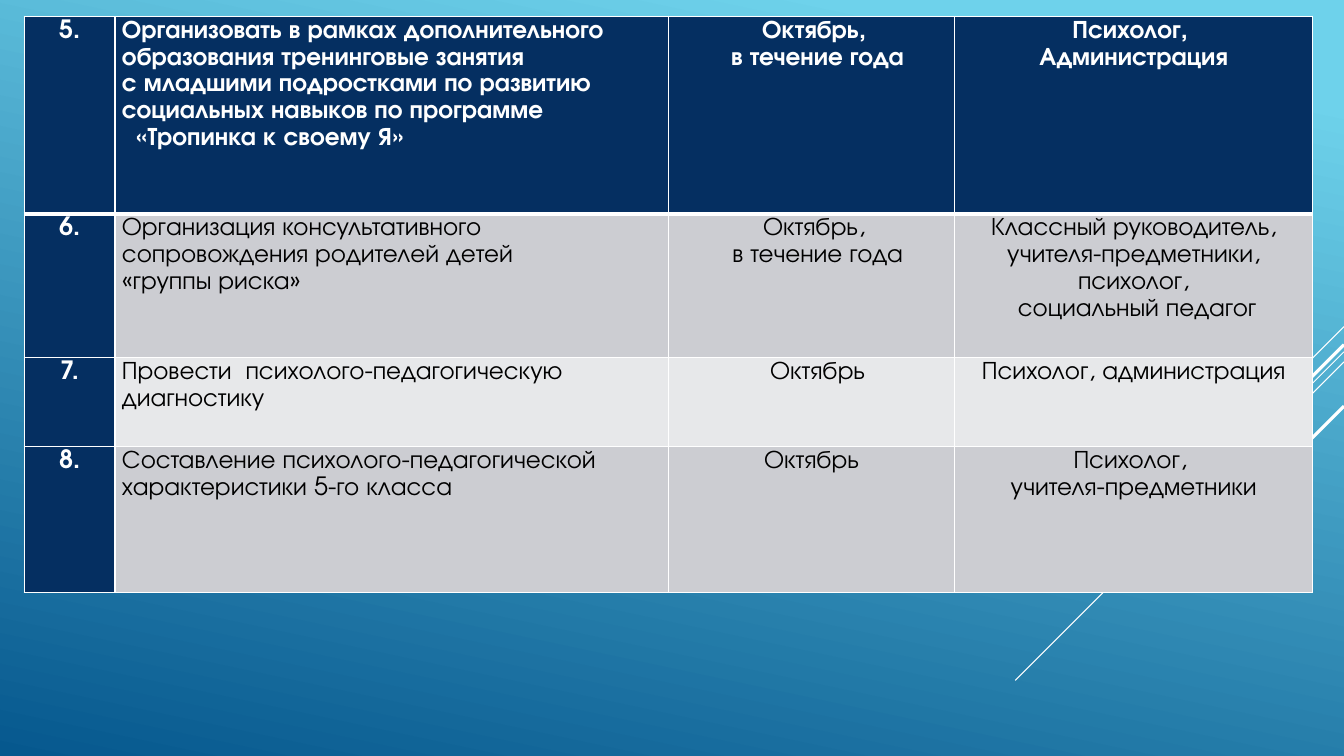
from lxml import etree
from pptx import Presentation
from pptx.dml.color import RGBColor
from pptx.enum.shapes import MSO_CONNECTOR
from pptx.enum.text import PP_ALIGN
from pptx.oxml.ns import qn
from pptx.util import Inches, Pt

COLORS = {"white": "FFFFFF", "black": "000000", "navy": "052F61",
          "gray": "CCCDD2", "light": "E7E8EA", "sky": "6ED2EB", "deep": "06588E"}
FONT = "TeX Gyre Adventor"
COL_WIDTHS = [0.9, 5.49, 2.84, 3.55]
ROW_HEIGHTS = [1.96, 1.43, 0.88, 1.45]
ROW_FILLS = ["navy", "gray", "light", "gray"]
# Each line of a cell's text is a paragraph of its own.
PLAN = [
    ["5.",
     "Организовать в рамках дополнительного образования тренинговые занятия\n"
     "с младшими подростками по развитию социальных навыков по программе\n"
     "  «Тропинка к своему Я»",
     "Октябрь, \nв течение года", "Психолог, \nАдминистрация"],
    ["6.",
     "Организация консультативного сопровождения родителей детей\n«группы риска»",
     "Октябрь, \nв течение года",
     "Классный руководитель, учителя-предметники, психолог,\n социальный педагог"],
    ["7.", "Провести  психолого-педагогическую диагностику",
     "Октябрь", "Психолог, администрация"],
    ["8.", "Составление психолого-педагогической характеристики 5-го класса",
     "Октябрь", "Психолог, \nучителя-предметники"],
]
# Start height at the right edge, run to the lower left, line width
RAYS = [(3.24, 1, 0.75), (3.49, 3.26, 0.75), (3.59, 2.07, 0.75),
        (3.42, 1.91, 2.25), (4.03, 1.39, 2.25)]


def rgb(name):
    return RGBColor.from_string(COLORS[name])


def set_background(s):
    fill = s.background.fill
    fill.gradient()
    fill.gradient_angle = 258
    for stop, (pos, name) in zip(fill.gradient_stops, [(0.1, "sky"), (1, "deep")]):
        stop.position = pos
        stop.color.rgb = rgb(name)


def add_ray(s, top, run, width):
    """Draw a 45-degree line from the right edge to the lower left."""
    line = s.shapes.add_connector(
        MSO_CONNECTOR.STRAIGHT, Inches(13.33), Inches(top),
        Inches(13.33 - run), Inches(top + run))
    line.line.color.rgb = rgb("white")
    line.line.width = Pt(width)
    etree.SubElement(line._element.spPr, qn("a:effectLst"))


def set_borders(cell, bottom):
    """Put white borders before the cell's fill, as the schema orders them."""
    tcPr = cell._tc.get_or_add_tcPr()
    sides = {"a:lnL": 1, "a:lnR": 1, "a:lnT": 1, "a:lnB": bottom}
    for i, (tag, width) in enumerate(sides.items()):
        ln = etree.Element(qn(tag), w=str(Pt(width)))
        solid = etree.SubElement(ln, qn("a:solidFill"))
        etree.SubElement(solid, qn("a:srgbClr"), val=COLORS["white"])
        tcPr.insert(i, ln)


def fill_cell(cell, text, row, col):
    strong = row == 0 or col == 0
    margins = {"margin_left": 0.07, "margin_right": 0.07,
               "margin_top": 0, "margin_bottom": 0}
    for name, value in margins.items():
        setattr(cell, name, Inches(value))
    cell.fill.solid()
    cell.fill.fore_color.rgb = rgb("navy" if strong else ROW_FILLS[row])
    set_borders(cell, 3 if row == 0 else 1)
    font_format = {"name": FONT, "size": Pt(18), "bold": strong}
    tf = cell.text_frame
    for i, line in enumerate(text.split("\n")):
        p = tf.add_paragraph() if i else tf.paragraphs[0]
        p.alignment = PP_ALIGN.LEFT if col == 1 else PP_ALIGN.CENTER
        p.line_spacing = 1.15
        if col == 2 and row < 3:
            p._p.get_or_add_pPr().set("marL", str(Inches(0.12)))
        r = p.add_run()
        r.text = line
        for name, value in font_format.items():
            setattr(r.font, name, value)
        r.font.color.rgb = rgb("white" if strong else "black")


def add_plan_table(s):
    table = s.shapes.add_table(
        len(ROW_HEIGHTS), len(COL_WIDTHS), Inches(0.24), Inches(0.16),
        Inches(sum(COL_WIDTHS)), Inches(sum(ROW_HEIGHTS))).table
    for column, width in zip(table.columns, COL_WIDTHS):
        column.width = Inches(width)
    for i, (height, texts) in enumerate(zip(ROW_HEIGHTS, PLAN)):
        table.rows[i].height = Inches(height)
        for j, text in enumerate(texts):
            fill_cell(table.cell(i, j), text, i, j)


def main():
    prs = Presentation()
    prs.slide_width, prs.slide_height = Inches(13.33), Inches(7.5)
    s = prs.slides.add_slide(prs.slide_layouts[6])
    set_background(s)
    for ray in RAYS:
        add_ray(s, *ray)
    add_plan_table(s)
    prs.save("out.pptx")


if __name__ == "__main__":
    main()
